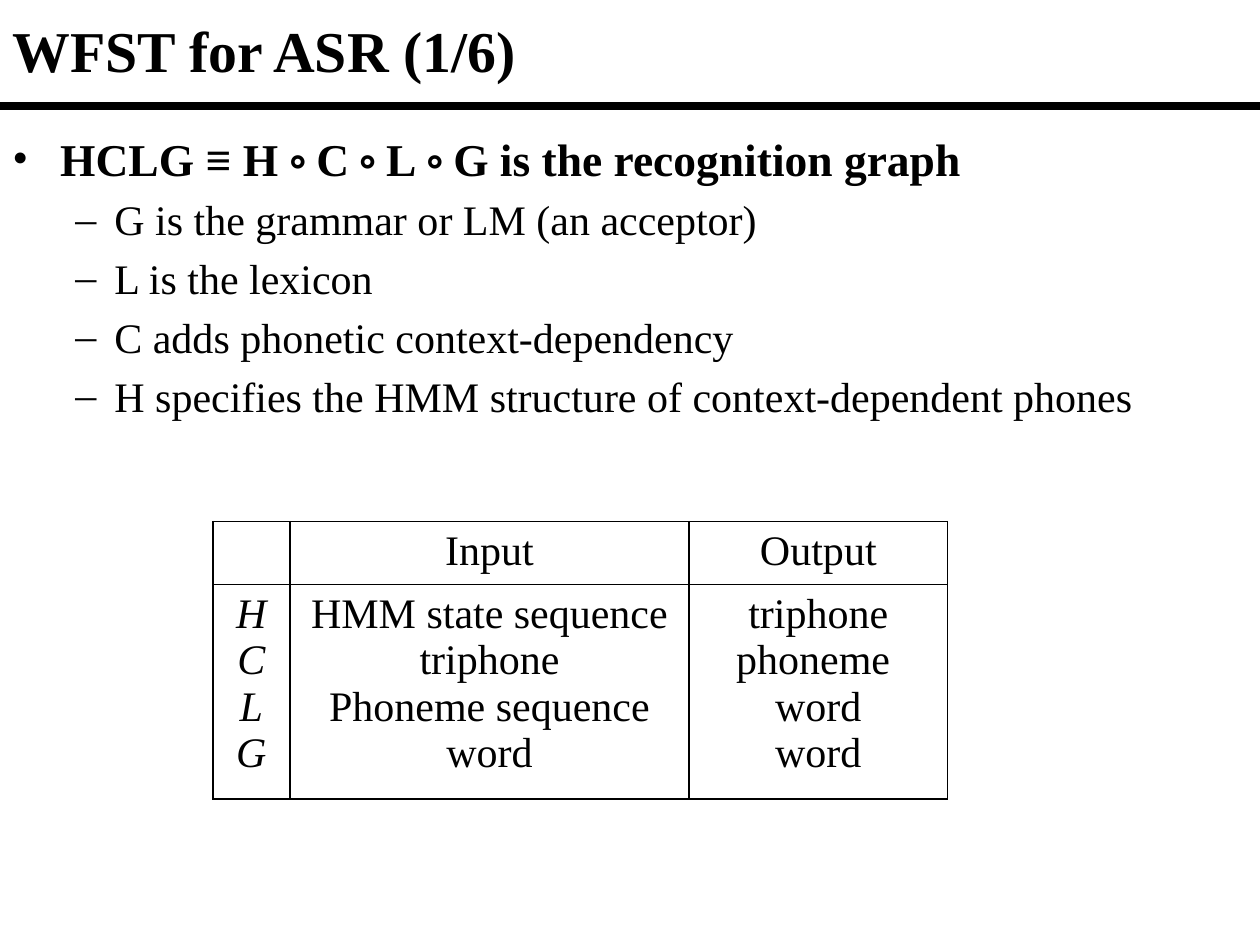
from lxml import etree
from pptx import Presentation
from pptx.dml.color import RGBColor
from pptx.enum.shapes import MSO_CONNECTOR
from pptx.enum.text import MSO_ANCHOR, PP_ALIGN
from pptx.oxml.ns import qn
from pptx.util import Inches, Pt

STRAIGHT = MSO_CONNECTOR.STRAIGHT
MIDDLE = MSO_ANCHOR.MIDDLE
TOP = MSO_ANCHOR.TOP
CENTER = PP_ALIGN.CENTER
COLORS = {"ink": "000000", "paper": "FFFFFF"}
SERIF, SANS = "Times New Roman", "Calibri"
WIDTH, HEIGHT = 10, 7.5

HEADING = [("HCLG ≡ H ", SERIF), ("◦ ", SANS), ("C", SERIF), (" ◦ ", SANS),
           ("L", SERIF), (" ◦ ", SANS), ("G is the recognition graph", SERIF)]
POINTS = ["G is the grammar or LM (an acceptor)", "L is the lexicon",
          "C adds phonetic context-dependency",
          "H specifies the HMM structure of context-dependent phones"]
TABLE = [
    [[], ["Input"], ["Output"]],
    [["H", "C", "L", "G"],
     ["HMM state sequence", "triphone", "Phoneme sequence", "word"],
     ["triphone", "phoneme ", "word", "word"]],
]


class SlideBuilder:
    """Draws black serif elements on one slide, placed by shares of its size."""

    def __init__(self, presentation):
        self.width = presentation.slide_width
        self.height = presentation.slide_height
        self.slide = presentation.slides.add_slide(presentation.slide_layouts[6])
        background = self.slide.background.fill
        background.solid()
        background.fore_color.rgb = self.color("paper")

    def color(self, name):
        return RGBColor.from_string(COLORS[name])

    def place(self, left, top, width, height):
        return (round(left * self.width), round(top * self.height),
                round(width * self.width), round(height * self.height))

    def style(self, font, size, bold=False, italic=False):
        font.name, font.size, font.bold, font.italic = SERIF, Pt(size), bold, italic
        font.color.rgb = self.color("ink")

    def text_frame(self, box, anchor):
        frame = self.slide.shapes.add_textbox(*self.place(*box)).text_frame
        frame.word_wrap = True
        frame.vertical_anchor = anchor
        return frame

    def title(self, box, text):
        paragraph = self.text_frame(box, MIDDLE).paragraphs[0]
        paragraph.text = text
        self.style(paragraph.font, 33, bold=True)

    def bullet(self, paragraph, symbol, margin, indent):
        properties = paragraph._p.get_or_add_pPr()
        properties.set("marL", str(Inches(margin)))
        properties.set("indent", str(Inches(-indent)))
        spacing = etree.SubElement(properties, qn("a:spcBef"))
        etree.SubElement(spacing, qn("a:spcPct"), val="20000")
        etree.SubElement(properties, qn("a:buFont"), typeface=SERIF)
        etree.SubElement(properties, qn("a:buChar"), char=symbol)

    def body(self, box, heading, points):
        frame = self.text_frame(box, TOP)
        paragraph = frame.paragraphs[0]
        self.bullet(paragraph, "•", 0.38, 0.38)
        self.style(paragraph.font, 26, bold=True)
        for text, typeface in heading:
            run = paragraph.add_run()
            run.text, run.font.name = text, typeface
        for point in points:
            paragraph = frame.add_paragraph()
            paragraph.text, paragraph.level = point, 1
            self.bullet(paragraph, "–", 0.81, 0.31)
            self.style(paragraph.font, 24)

    def rule(self, share, weight):
        y = round(share * self.height)
        connector = self.slide.shapes.add_connector(STRAIGHT, 0, y, self.width, y)
        connector.line.color.rgb = self.color("ink")
        connector.line.width = Pt(weight)
        etree.SubElement(connector._element.spPr, qn("a:effectLst"))

    def border(self, cell, weight):
        properties = cell._tc.get_or_add_tcPr()
        for side in ("lnL", "lnR", "lnT", "lnB"):
            line = etree.SubElement(properties, qn(f"a:{side}"), w=str(Pt(weight)))
            fill = etree.SubElement(line, qn("a:solidFill"))
            etree.SubElement(fill, qn("a:srgbClr"), val=COLORS["ink"])

    def table(self, box, content, columns, rows):
        table = self.slide.shapes.add_table(
            len(rows), len(columns), *self.place(*box)).table
        table.first_row = table.horz_banding = False
        for column, width in zip(table.columns, columns):
            column.width = Inches(width)
        for row, height in zip(table.rows, rows):
            row.height = Inches(height)
        for row, texts in zip(table.rows, content):
            for index, (cell, lines) in enumerate(zip(row.cells, texts)):
                self.border(cell, 1)
                cell.fill.background()
                cell.text = "\n".join(lines)
                for paragraph in cell.text_frame.paragraphs:
                    paragraph.alignment = CENTER
                    self.style(paragraph.font, 24, italic=index == 0)


def main():
    presentation = Presentation()
    presentation.slide_width = Inches(WIDTH)
    presentation.slide_height = Inches(HEIGHT)
    builder = SlideBuilder(presentation)
    builder.title((0, 0, 1, 0.79 / HEIGHT), "WFST for ASR (1/6)")
    builder.body((0, 0.99 / HEIGHT, 1, 2.48 / HEIGHT), HEADING, POINTS)
    builder.rule(0.84 / HEIGHT, 4.5)
    builder.table((0.169, 4.14 / HEIGHT, 0.583, 2.2 / HEIGHT), TABLE,
                  columns=[0.61, 3.17, 2.05], rows=[0.5, 1.7])
    presentation.save("out.pptx")


if __name__ == "__main__":
    main()
